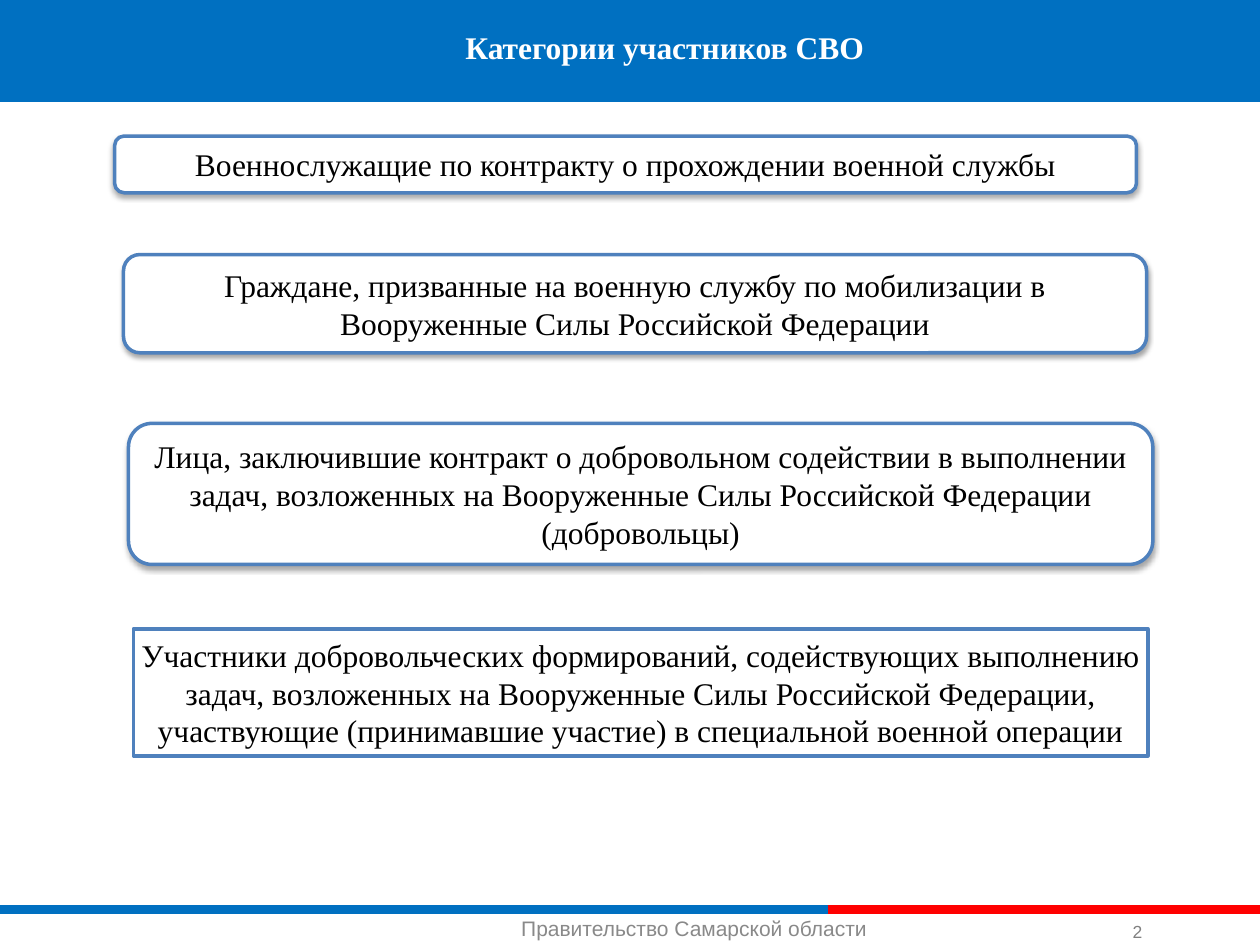
import pptx
import pptx.util
import pptx.dml.color
import pptx.enum.shapes
import pptx.enum.text
import pptx.oxml
import pptx.oxml.ns

Inches = pptx.util.Inches
RGBColor = pptx.dml.color.RGBColor
SHAPE = pptx.enum.shapes.MSO_SHAPE
ANCHOR = pptx.enum.text.MSO_ANCHOR
ALIGN = pptx.enum.text.PP_ALIGN

BLUE = RGBColor(0x00, 0x70, 0xC1)
RED = RGBColor(0xFF, 0x00, 0x00)
OUTLINE = RGBColor(0x4F, 0x81, 0xBD)
WHITE = RGBColor(0xFF, 0xFF, 0xFF)
BLACK = RGBColor(0x00, 0x00, 0x00)
FOOTER_GRAY = RGBColor(0x89, 0x89, 0x89)
NUMBER_GRAY = RGBColor(0x80, 0x80, 0x80)

SHADOW = (
    f'<a:outerShdw {pptx.oxml.ns.nsdecls("a")} blurRad="38100" dist="22860" '
    'dir="5400000" rotWithShape="0"><a:srgbClr val="000000">'
    '<a:alpha val="35000"/></a:srgbClr></a:outerShdw>'
)


def write_text(shape, text, size, font_name, color, anchor=ANCHOR.MIDDLE,
               align=ALIGN.CENTER, bold=False, wrap=True):
    frame = shape.text_frame
    frame.word_wrap = wrap
    frame.vertical_anchor = anchor
    frame.margin_left = frame.margin_right = Inches(0.05)
    frame.margin_top = frame.margin_bottom = Inches(0.05)
    paragraph = frame.paragraphs[0]
    paragraph.alignment = align
    run = paragraph.add_run()
    run.text = text
    run.font.size = pptx.util.Pt(size)
    run.font.name = font_name
    run.font.bold = bold
    run.font.color.rgb = color


presentation = pptx.Presentation()
presentation.slide_width = Inches(10)
presentation.slide_height = Inches(7.5)
slide = presentation.slides.add_slide(presentation.slide_layouts[6])
shapes = slide.shapes

# Footer stripe
for start, end, color in [(0, 6.57, BLUE), (6.57, 10, RED)]:
    stripe = shapes.add_connector(
        pptx.enum.shapes.MSO_CONNECTOR.STRAIGHT,
        Inches(start), Inches(7.22), Inches(end), Inches(7.22))
    stripe.line.color.rgb = color
    stripe.line.width = pptx.util.Pt(5)
    stripe._element.spPr.append(pptx.oxml.parse_xml(
        f'<a:effectLst {pptx.oxml.ns.nsdecls("a")}/>'))

# Footer text and slide number
footer = shapes.add_textbox(Inches(2.24), Inches(7.22), Inches(6.54), Inches(0.29))
write_text(footer, "Правительство Самарской области", 12, "Arial", FOOTER_GRAY,
           anchor=ANCHOR.TOP)
number = shapes.add_textbox(Inches(8.94), Inches(7.26), Inches(0.27), Inches(0.27))
write_text(number, "2", 10, "Arial", NUMBER_GRAY, anchor=ANCHOR.BOTTOM,
           align=ALIGN.LEFT, wrap=False)

# Header band and title
band = shapes.add_shape(SHAPE.RECTANGLE, Inches(0), Inches(-0.03), Inches(10), Inches(0.84))
band.shadow.inherit = False
band.fill.solid()
band.fill.fore_color.rgb = BLUE
band.line.fill.background()
title = shapes.add_textbox(Inches(1.3), Inches(-0.03), Inches(7.95), Inches(0.81))
write_text(title, "Категории участников СВО", 18, "Times New Roman", WHITE, bold=True)

# Category boxes: kind, left, top, width, height, text
categories = [
    (SHAPE.ROUNDED_RECTANGLE, 0.91, 1.08, 8.11, 0.45,
     "Военнослужащие по контракту о прохождении военной службы"),
    (SHAPE.ROUNDED_RECTANGLE, 0.98, 2.02, 8.12, 0.78,
     "Граждане, призванные на военную службу по мобилизации в "
     "Вооруженные Силы Российской Федерации"),
    (SHAPE.ROUNDED_RECTANGLE, 1.02, 3.36, 8.13, 1.12,
     "Лица, заключившие контракт о добровольном содействии в выполнении задач, "
     "возложенных на Вооруженные Силы Российской Федерации (добровольцы)"),
    (SHAPE.RECTANGLE, 1.06, 4.99, 8.05, 1.01,
     "Участники добровольческих формирований, содействующих выполнению задач, "
     "возложенных на Вооруженные Силы Российской Федерации, участвующие "
     "(принимавшие участие) в специальной военной операции"),
]
for kind, left, top, width, height, text in categories:
    box = shapes.add_shape(kind, Inches(left), Inches(top), Inches(width), Inches(height))
    box.fill.solid()
    box.fill.fore_color.rgb = WHITE
    box.line.color.rgb = OUTLINE
    box.line.width = pptx.util.Pt(2)
    box.shadow.inherit = False
    if kind == SHAPE.ROUNDED_RECTANGLE:
        effects = box._element.spPr.find(pptx.oxml.ns.qn("a:effectLst"))
        effects.append(pptx.oxml.parse_xml(SHADOW))
    write_text(box, text, 18, "Times New Roman", BLACK)

presentation.save("out.pptx")
